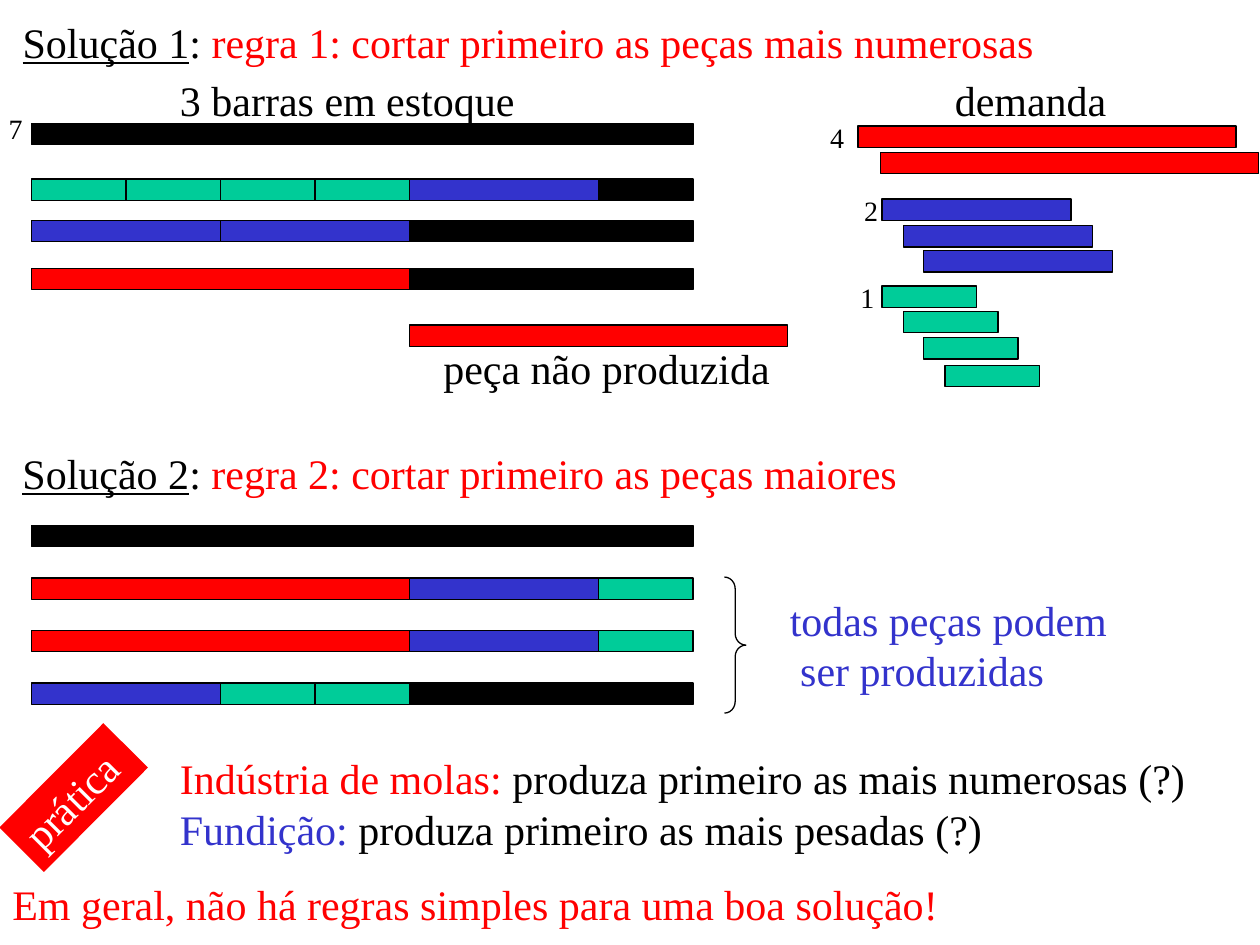
import pptx
import pptx.dml.color
import pptx.enum.shapes
import pptx.enum.text
import pptx.util

Inches = pptx.util.Inches
RGBColor = pptx.dml.color.RGBColor
Shape = pptx.enum.shapes.MSO_SHAPE

BLACK = RGBColor(0, 0, 0)
WHITE = RGBColor(255, 255, 255)
RED = RGBColor(255, 0, 0)
BLUE = RGBColor(0x33, 0x33, 0xCC)
GREEN = RGBColor(0, 0xCC, 0x99)

UNIT = 0.75  # inches per unit of bar length
BAR_HEIGHT = 0.17
BAR_LEFT = 0.25
PIECE_COLOURS = {4: RED, 2: BLUE, 1: GREEN}


def write(box, paragraphs, size=24):
    """Fill a box with paragraphs, each a list of (text, colour[, underline])."""
    frame = box.text_frame
    frame.word_wrap = True
    frame.auto_size = pptx.enum.text.MSO_AUTO_SIZE.NONE
    frame.vertical_anchor = pptx.enum.text.MSO_ANCHOR.TOP
    for index, spans in enumerate(paragraphs):
        para = frame.add_paragraph() if index else frame.paragraphs[0]
        para.alignment = pptx.enum.text.PP_ALIGN.LEFT
        for text, colour, *underline in spans:
            span = para.add_run()
            span.text = text
            span.font.name = "Times New Roman"
            span.font.size = pptx.util.Pt(size)
            span.font.color.rgb = colour
            if underline:
                span.font.underline = True


def add_text(page, left, top, width, height, *paragraphs, size=24):
    box = page.shapes.add_textbox(*map(Inches, (left, top, width, height)))
    write(box, paragraphs, size)


def add_outline(page, kind, left, top, width, height):
    """Add a shape with a thin black line and no shadow."""
    shape = page.shapes.add_shape(kind, *map(Inches, (left, top, width, height)))
    shape.shadow.inherit = False
    shape.line.color.rgb = BLACK
    shape.line.width = pptx.util.Pt(0.75)
    return shape


def add_piece(page, left, top, length, colour):
    piece = add_outline(page, Shape.RECTANGLE, left, top, length * UNIT, BAR_HEIGHT)
    piece.fill.solid()
    piece.fill.fore_color.rgb = colour


def add_bar(page, top, pieces, stock=7):
    """Lay the pieces end to end; what is left of the stock bar is black."""
    left = BAR_LEFT
    for length in pieces:
        add_piece(page, left, top, length, PIECE_COLOURS[length])
        left += length * UNIT
    waste = stock - sum(pieces)
    if waste:
        add_piece(page, left, top, waste, BLACK)


def add_demand(page, length, positions, label_left, label_top):
    for left, top in positions:
        add_piece(page, left, top, length, PIECE_COLOURS[length])
    add_text(page, label_left, label_top, 0.32, 0.37, [(str(length), BLACK)], size=16)


def heading(number, rule):
    return [(f"Solução {number}", BLACK, True), (": ", BLACK),
            (f"regra {number}: {rule}", RED)]


def add_practice_label(page):
    label = page.shapes.add_shape(Shape.RECTANGLE, 0, Inches(6.08), Inches(1.17), Inches(0.5))
    label.shadow.inherit = False
    label.fill.solid()
    label.fill.fore_color.rgb = RED
    label.line.fill.background()
    label.rotation = 314.9
    write(label, [[("prática", WHITE)]])


def add_first_solution(page):
    title = page.shapes.title
    title.left, title.top, title.width, title.height = map(Inches, (0.08, 0.08, 8.92, 0.5))
    write(title, [heading(1, "cortar primeiro as peças mais numerosas")])
    for top, pieces in ((0.98, []), (1.42, [1, 1, 1, 1, 2]), (1.75, [2, 2]), (2.13, [4])):
        add_bar(page, top, pieces)
    add_piece(page, BAR_LEFT + 4 * UNIT, 2.58, 4, RED)
    add_text(page, 3.42, 2.67, 2.92, 0.5, [("peça não produzida", BLACK)])
    add_text(page, 1.33, 0.54, 3.58, 0.5, [("3 barras em estoque", BLACK)])
    add_text(page, -0.03, 0.84, 0.35, 0.37, [("7", BLACK)], size=16)

    add_text(page, 7.48, 0.54, 1.5, 0.5, [("demanda", BLACK)])
    steps = (7, 7.17, 7.33, 7.5)
    add_demand(page, 4, ((6.81, 1), (6.99, 1.21)), 6.49, 0.91)
    add_demand(page, 2, zip(steps, (1.58, 1.79, 1.99)), 6.76, 1.49)
    add_demand(page, 1, zip(steps, (2.27, 2.47, 2.68, 2.9)), 6.73, 2.18)


def add_second_solution(page):
    add_text(page, 0.08, 3.5, 8.92, 0.5, heading(2, "cortar primeiro as peças maiores"))
    for row, pieces in enumerate(([], [4, 2, 1], [4, 2, 1], [2, 1, 1])):
        add_bar(page, 4.17 + row * 1.25 / 3, pieces)
    brace = add_outline(page, Shape.RIGHT_BRACE, 5.75, 4.58, 0.17, 1.08)
    brace.fill.background()
    brace.adjustments[0] = 0.54
    add_text(page, 6.17, 4.67, 3, 0.9,
             [("todas peças podem", BLUE)], [(" ser produzidas", BLUE)])


def add_conclusions(page):
    add_practice_label(page)
    add_text(page, 1.33, 5.92, 8.67, 0.5, [("Indústria de molas:", RED),
             (" produza primeiro as mais numerosas (?)", BLACK)])
    add_text(page, 1.33, 6.33, 8.83, 0.5, [("Fundição:", BLUE),
             (" produza primeiro as mais pesadas (?)", BLACK)])
    add_text(page, 0, 6.92, 7.67, 0.5,
             [("Em geral, não há regras simples para uma boa solução!", RED)])


def main():
    deck = pptx.Presentation()
    deck.slide_width, deck.slide_height = Inches(10), Inches(7.5)
    page = deck.slides.add_slide(deck.slide_layouts.get_by_name("Title Only"))
    add_first_solution(page)
    add_second_solution(page)
    add_conclusions(page)
    deck.save("out.pptx")


if __name__ == "__main__":
    main()
